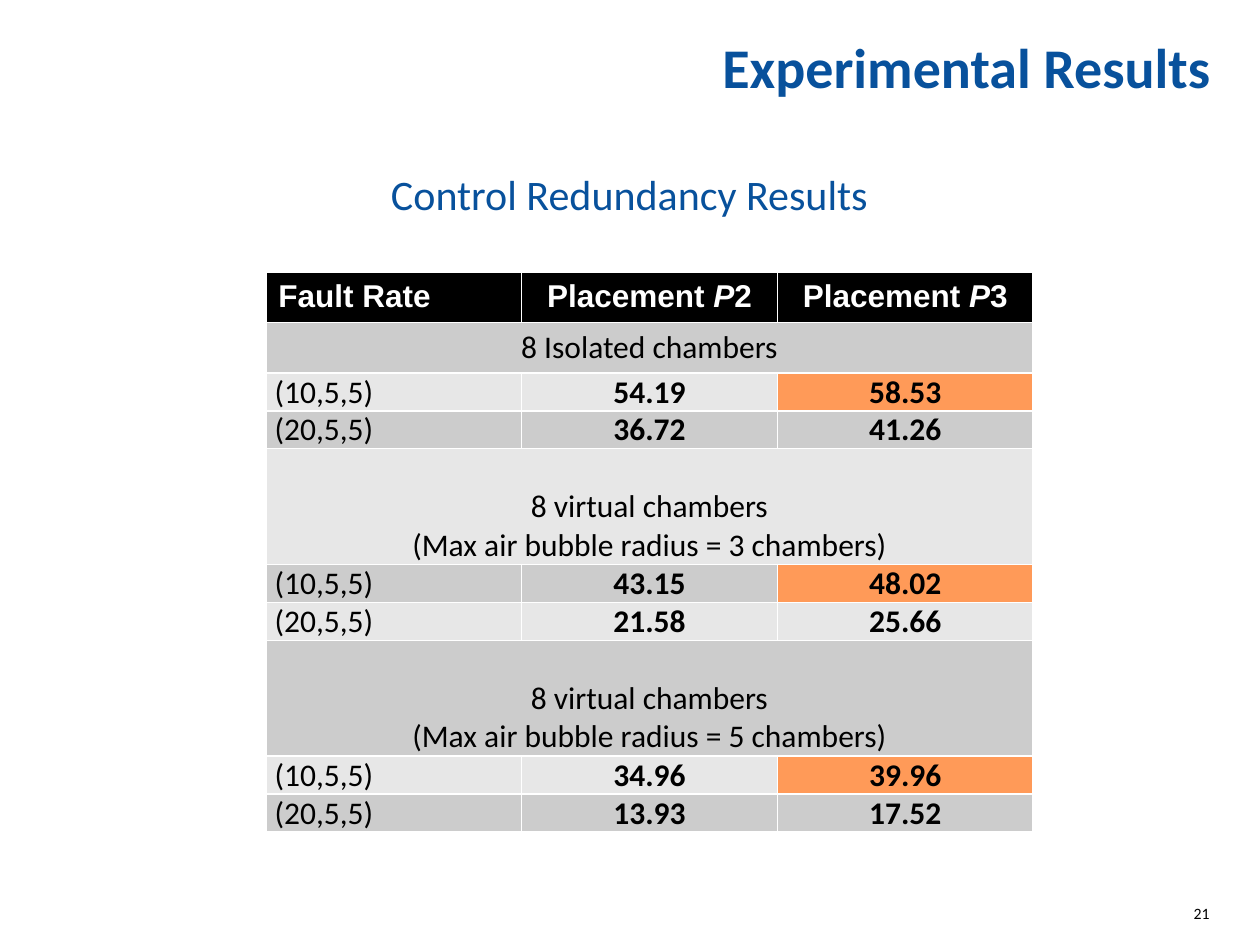
from pptx import Presentation
from pptx.dml.color import RGBColor
from pptx.enum.text import MSO_ANCHOR, PP_ALIGN
from pptx.util import Inches, Pt

LEFT, CENTER, RIGHT = PP_ALIGN.LEFT, PP_ALIGN.CENTER, PP_ALIGN.RIGHT
TOP, BOTTOM = MSO_ANCHOR.TOP, MSO_ANCHOR.BOTTOM
BLUE = RGBColor(0x08, 0x51, 0x9C)
BLACK = RGBColor(0x00, 0x00, 0x00)
WHITE = RGBColor(0xFF, 0xFF, 0xFF)
DARK_BAND = RGBColor(0xCC, 0xCC, 0xCC)
LIGHT_BAND = RGBColor(0xE7, 0xE7, 0xE7)
ORANGE = RGBColor(0xFF, 0x9A, 0x58)

COLUMN_WIDTH = 2.03
HEADER_HEIGHT, FIRST_GROUP_HEIGHT = 0.38, 0.4
DATA_HEIGHT, GROUP_HEIGHT = 0.3, 0.92


def add_span(para, text, size, color, bold=False, italic=False, font="Calibri"):
    span = para.add_run()
    span.text = text
    span.font.name, span.font.size = font, Pt(size)
    span.font.bold, span.font.italic = bold, italic
    span.font.color.rgb = color


deck = Presentation()
deck.slide_width, deck.slide_height = Inches(10), Inches(7.5)
page = deck.slides.add_slide(deck.slide_layouts[6])

# Title, subtitle and page number
labels = [
    ("Experimental Results", (0.39, 0, 9.22, 0.79), BOTTOM, RIGHT, 0.8, 32, BLUE, True),
    ("Control Redundancy Results", (0.62, 1.34, 8.75, 0.69), TOP, CENTER, 1, 24, BLUE, False),
    ("21", (9.27, 7.17, 0.33, 0.33), TOP, RIGHT, 1, 9, BLACK, False),
]
for text, place, anchor, align, spacing, size, color, bold in labels:
    box = page.shapes.add_textbox(*map(Inches, place))
    frame = box.text_frame
    frame.word_wrap = True
    frame.vertical_anchor = anchor
    frame.margin_left = frame.margin_top = frame.margin_right = frame.margin_bottom = 0
    para = frame.paragraphs[0]
    para.alignment, para.line_spacing = align, spacing
    add_span(para, text, size, color, bold)

# A row with a single entry is a group heading across all columns
body = [
    ["8 Isolated chambers"],
    ["(10,5,5)", "54.19", "58.53"],
    ["(20,5,5)", "36.72", "41.26"],
    ["8 virtual chambers\n(Max air bubble radius = 3 chambers)"],
    ["(10,5,5)", "43.15", "48.02"],
    ["(20,5,5)", "21.58", "25.66"],
    ["8 virtual chambers\n(Max air bubble radius = 5 chambers)"],
    ["(10,5,5)", "34.96", "39.96"],
    ["(20,5,5)", "13.93", "17.52"],
]
heights = [HEADER_HEIGHT, FIRST_GROUP_HEIGHT]
heights += [GROUP_HEIGHT if len(entries) == 1 else DATA_HEIGHT for entries in body[1:]]
table = page.shapes.add_table(
    len(heights), 3, Inches(2.11), Inches(2.16),
    Inches(3 * COLUMN_WIDTH), Inches(sum(heights))).table
for column in table.columns:
    column.width = Inches(COLUMN_WIDTH)
for row, height in zip(table.rows, heights):
    row.height = Inches(height)

header = [["Fault Rate"], ["Placement ", "P", "2"], ["Placement ", "P", "3"]]
for column, parts in enumerate(header):
    cell = table.cell(0, column)
    cell.fill.solid()
    cell.fill.fore_color.rgb = BLACK
    para = cell.text_frame.paragraphs[0]
    para.alignment = CENTER if column else LEFT
    for part in parts:
        add_span(para, part, 18, WHITE, True, part == "P", "Arial")

for row, entries in enumerate(body, start=1):
    is_group = len(entries) == 1
    if is_group:
        table.cell(row, 0).merge(table.cell(row, 2))
    for column, entry in enumerate(entries):
        cell = table.cell(row, column)
        cell.fill.solid()
        is_best = column == 2 and entries[0] == "(10,5,5)"
        band = DARK_BAND if row % 2 else LIGHT_BAND
        cell.fill.fore_color.rgb = ORANGE if is_best else band
        if row > 1:
            cell.margin_left = cell.margin_right = Inches(0.07)
            cell.margin_top = cell.margin_bottom = 0
            cell.vertical_anchor = BOTTOM if is_group else TOP
        frame = cell.text_frame
        for number, line in enumerate(entry.split("\n")):
            para = frame.add_paragraph() if number else frame.paragraphs[0]
            para.alignment = CENTER if is_group or column else LEFT
            add_span(para, line, 18, BLACK, bold=column > 0)

deck.save("out.pptx")
